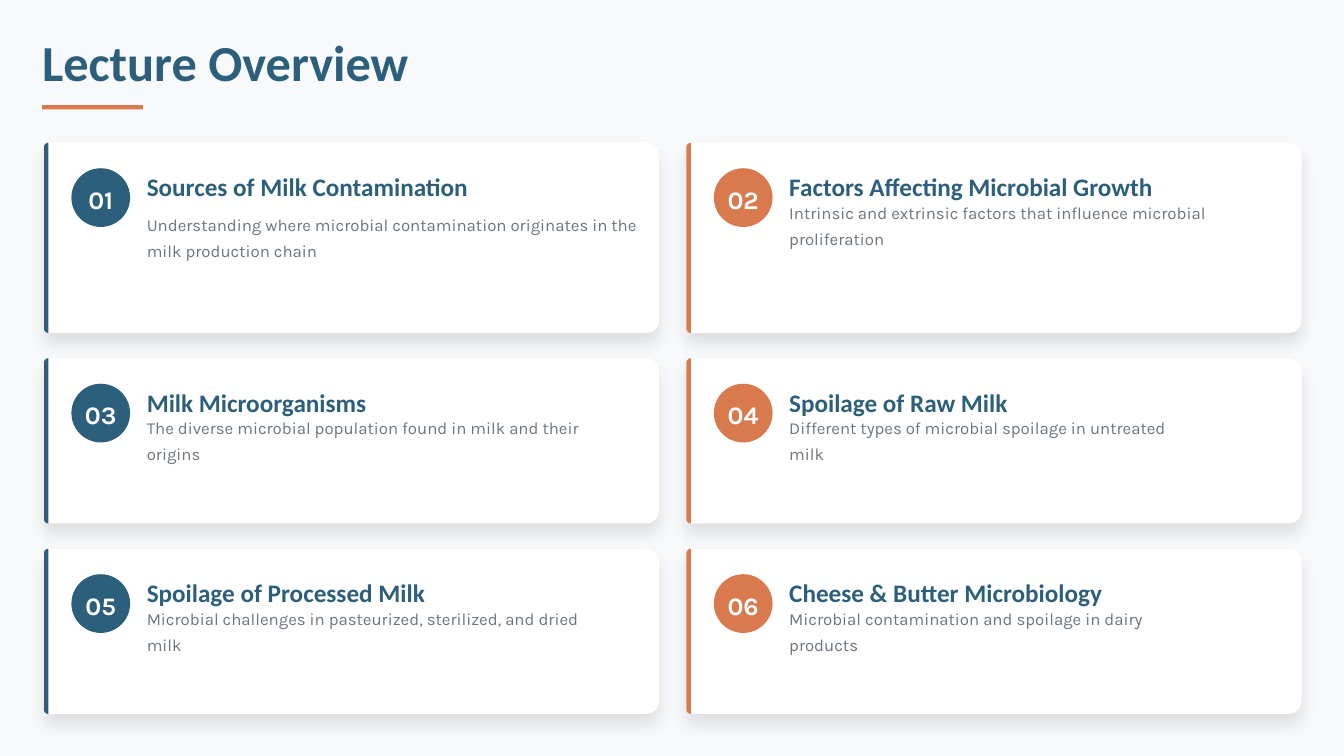
import math
from lxml import etree
from pptx import Presentation, util as u
from pptx.dml.color import RGBColor
from pptx.enum import shapes, text
from pptx.oxml.ns import qn

BLUE, ORANGE, GREY, WHITE = "2C5F7C", "D97A4E", "6C757D", "FFFFFF"
BAR = 0.11
CARD_W, COLUMN_PITCH, ROW_GAP = 15.5, 16.19, 0.64
ROW_HEIGHTS = [4.79, 4.16, 4.16]
TOPICS = [
    ("Sources of Milk Contamination",
     "Understanding where microbial contamination originates in the milk production chain", 12.5, 1.27),
    ("Factors Affecting Microbial Growth",
     "Intrinsic and extrinsic factors that influence microbial proliferation", 12.19, 0.64),
    ("Milk Microorganisms",
     "The diverse microbial population found in milk and their origins", 11.71, 0.64),
    ("Spoilage of Raw Milk",
     "Different types of microbial spoilage in untreated milk", 9.98, 0.64),
    ("Spoilage of Processed Milk",
     "Microbial challenges in pasteurized, sterilized, and dried milk", 11.23, 0.64),
    ("Cheese & Butter Microbiology",
     "Microbial contamination and spoilage in dairy products", 10.24, 0.64),
]


def rgb(color):
    return RGBColor.from_string(color)


def paint(sp, color):
    sp.fill.solid()
    sp.fill.fore_color.rgb = rgb(color)
    sp.line.fill.background()
    sp.shadow.inherit = False


def write(sp, words, size, font, color, spacing, bold=True, align=text.PP_ALIGN.LEFT):
    tf = sp.text_frame
    tf.word_wrap = True
    tf.auto_size = text.MSO_AUTO_SIZE.NONE
    tf.vertical_anchor = text.MSO_ANCHOR.MIDDLE
    tf.margin_left = tf.margin_right = tf.margin_top = tf.margin_bottom = 0
    p = tf.paragraphs[0]
    p.alignment = align
    p.line_spacing = spacing
    r = p.add_run()
    r.text = words
    r.font.size = u.Pt(size)
    r.font.name = font
    r.font.bold = bold
    r.font.color.rgb = rgb(color)


def add_text(s, x, y, w, h, *args, **kwargs):
    sp = s.shapes.add_textbox(u.Cm(x), u.Cm(y), u.Cm(w), u.Cm(h))
    write(sp, *args, **kwargs)


def add_shape(s, kind, x, y, w, h, color):
    sp = s.shapes.add_shape(kind, u.Cm(x), u.Cm(y), u.Cm(w), u.Cm(h))
    paint(sp, color)
    return sp


def add_rounded(s, x, y, w, h, left_r, right_r, color):
    corners = [(x + left_r, y + left_r, left_r, 180),
               (x + w - right_r, y + right_r, right_r, 270),
               (x + w - right_r, y + h - right_r, right_r, 0),
               (x + left_r, y + h - left_r, left_r, 90)]
    points = []
    for cx, cy, radius, start in corners:
        for step in range(0, 91, 10):
            a = math.radians(start + step)
            points.append((u.Cm(cx + radius * math.cos(a)), u.Cm(cy + radius * math.sin(a))))
    builder = s.shapes.build_freeform(*points[0])
    builder.add_line_segments(points[1:], close=True)
    sp = builder.convert_to_shape()
    paint(sp, color)
    return sp


def add_shadow(sp):
    effects = sp._element.spPr.find(qn("a:effectLst"))
    shadow = etree.SubElement(effects, qn("a:outerShdw"), blurRad=str(u.Pt(11.2)),
                              dist=str(u.Pt(7.5)), dir="5400000", algn="ctr", rotWithShape="0")
    tint = etree.SubElement(shadow, qn("a:srgbClr"), val="000000")
    etree.SubElement(tint, qn("a:alpha"), val="10000")


def add_title(s):
    sp = s.shapes.title
    sp.left, sp.top, sp.width, sp.height = u.Cm(1.06), u.Cm(1.06), u.Cm(32.39), u.Cm(1.27)
    write(sp, "Lecture Overview", 36, "Calibri", BLUE, 0.8)
    add_shape(s, shapes.MSO_SHAPE.RECTANGLE, 1.06, 2.65, 2.54, BAR, ORANGE)


def add_card(s, x, y, h, number, color, heading, summary, summary_w, summary_h):
    add_shadow(add_rounded(s, x, y, CARD_W, h, BAR, 0.32, WHITE))
    add_rounded(s, x, y, BAR, h, BAR, 0, color)
    badge = add_shape(s, shapes.MSO_SHAPE.OVAL, x + 0.69, y + 0.64, 1.48, 1.48, color)
    write(badge, f"{number:02d}", 18, "Karla", WHITE, 1.1, align=text.PP_ALIGN.CENTER)
    text_x = x + 2.59
    add_text(s, text_x, y + 0.64, summary_w + 0.1, 0.85, heading, 18, "Calibri", BLUE, 1.1)
    add_text(s, text_x, y + 1.69, summary_w, summary_h, summary, 12, "Karla", GREY, 1.3, bold=False)


def main():
    prs = Presentation()
    prs.slide_width, prs.slide_height = u.Cm(33.87), u.Cm(19.05)
    s = prs.slides.add_slide(prs.slide_layouts[5])
    s.background.fill.solid()
    s.background.fill.fore_color.rgb = rgb("F8F9FA")
    add_title(s)
    for i, topic in enumerate(TOPICS):
        row, col = divmod(i, 2)
        y = 3.6 + sum(ROW_HEIGHTS[:row]) + row * ROW_GAP
        add_card(s, 1.11 + col * COLUMN_PITCH, y, ROW_HEIGHTS[row], i + 1, (BLUE, ORANGE)[col], *topic)
    prs.save("out.pptx")


if __name__ == "__main__":
    main()
